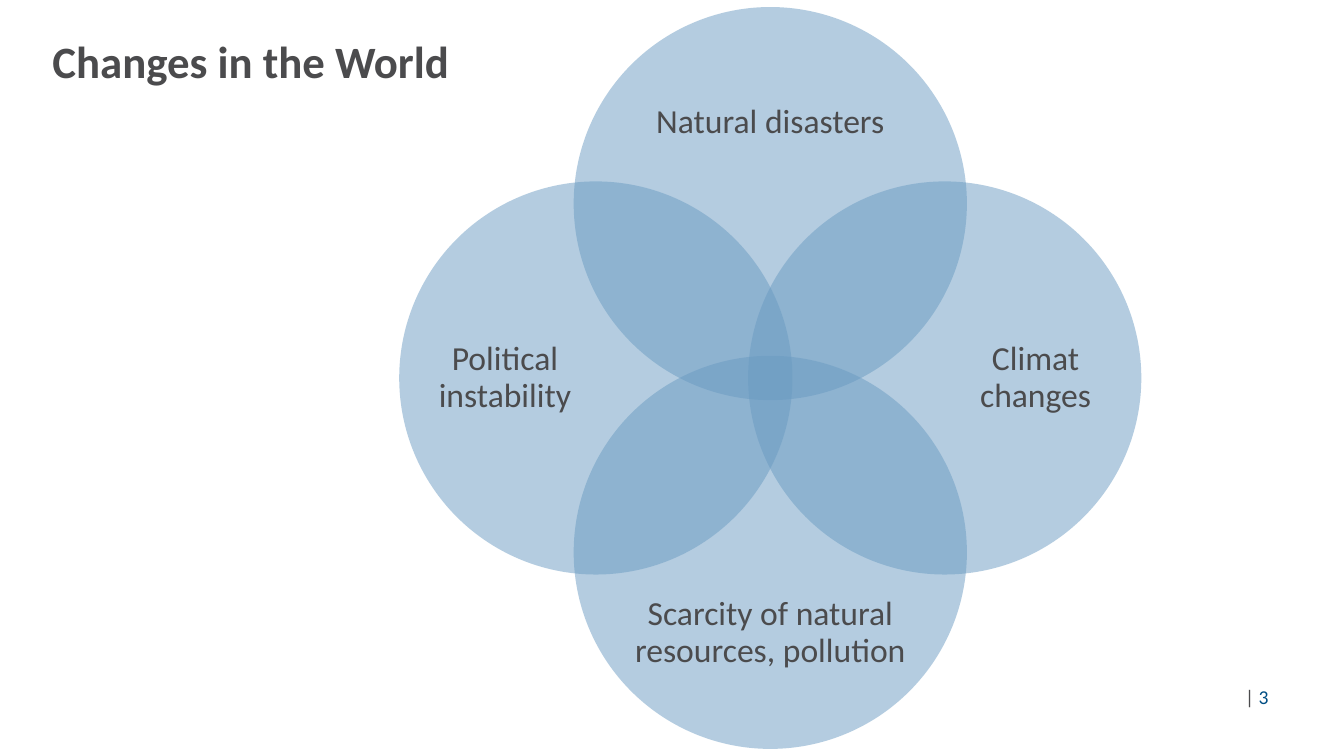
"""Build a slide with four overlapping circles of changes in the world."""
from pptx import Presentation, util as u
from pptx.dml.color import RGBColor
from pptx.enum import shapes, text
from pptx.oxml.ns import qn
from lxml import etree

GREY = RGBColor(0x4B, 0x4B, 0x4D)
NAVY = RGBColor(0x00, 0x4E, 0x84)
BLUE = RGBColor(0x6A, 0x9B, 0xC2)

CENTER_X, CENTER_Y = 7.64, 3.75
DIAMETER = 3.9
CIRCLE_STEP, LABEL_STEP = 1.73, 2.53
WIDE, TALL = (3, 1.24), (1.5, 3)


def box_around(x, y, w, h):
    return [u.Inches(v) for v in (x - w / 2, y - h / 2, w, h)]


def style_run(r, size, color, bold=False):
    r.font.name = "Calibri"
    r.font.size = u.Pt(size)
    r.font.color.rgb = color
    r.font.bold = bold


prs = Presentation()
prs.slide_width, prs.slide_height = u.Inches(13.33), u.Inches(7.5)
s = prs.slides.add_slide(prs.slide_layouts[5])

title = s.shapes.title
title.left, title.top = u.Inches(0.42), u.Inches(0.34)
title.width, title.height = u.Inches(9), u.Inches(1.25)
tf = title.text_frame
tf.text = "Changes in the World"
tf.auto_size = text.MSO_AUTO_SIZE.NONE
tf.vertical_anchor = text.MSO_ANCHOR.TOP
p = tf.paragraphs[0]
p.alignment = text.PP_ALIGN.LEFT
p.line_spacing = 0.9
style_run(p.runs[0], 32, GREY, True)

changes = [
    ("Natural disasters", 0, -1, WIDE),
    ("Climat changes", 1.04, 0, TALL),
    ("Scarcity of natural resources, pollution", 0, 1, WIDE),
    ("Political instability", -1.04, 0, TALL),
]
for label, dx, dy, size in changes:
    side = (dx > 0) - (dx < 0)
    circle = s.shapes.add_shape(
        shapes.MSO_SHAPE.OVAL,
        *box_around(CENTER_X + side * CIRCLE_STEP, CENTER_Y + dy * CIRCLE_STEP,
                    DIAMETER, DIAMETER))
    circle.shadow.inherit = False
    circle.fill.solid()
    circle.fill.fore_color.rgb = BLUE
    color = circle.fill._xPr.find(qn("a:solidFill"))[0]
    etree.SubElement(color, qn("a:alpha")).set("val", "50000")
    circle.line.fill.background()

    sp = s.shapes.add_textbox(
        *box_around(CENTER_X + dx * LABEL_STEP, CENTER_Y + dy * LABEL_STEP, *size))
    tf = sp.text_frame
    tf.text = label
    tf.word_wrap = True
    tf.vertical_anchor = text.MSO_ANCHOR.MIDDLE
    tf.margin_left = tf.margin_right = tf.margin_top = tf.margin_bottom = 0
    p = tf.paragraphs[0]
    p.alignment = text.PP_ALIGN.CENTER
    p.line_spacing = 0.9
    style_run(p.runs[0], 24, GREY)

sp = s.shapes.add_textbox(u.Inches(12.35), u.Inches(6.79), u.Inches(0.68), u.Inches(0.24))
tf = sp.text_frame
tf.word_wrap = True
tf.vertical_anchor = text.MSO_ANCHOR.MIDDLE
tf.margin_left = tf.margin_right = tf.margin_top = tf.margin_bottom = 0
for part, color in (("| ", GREY), ("3", NAVY)):
    r = tf.paragraphs[0].add_run()
    r.text = part
    style_run(r, 14, color)

prs.save("out.pptx")
